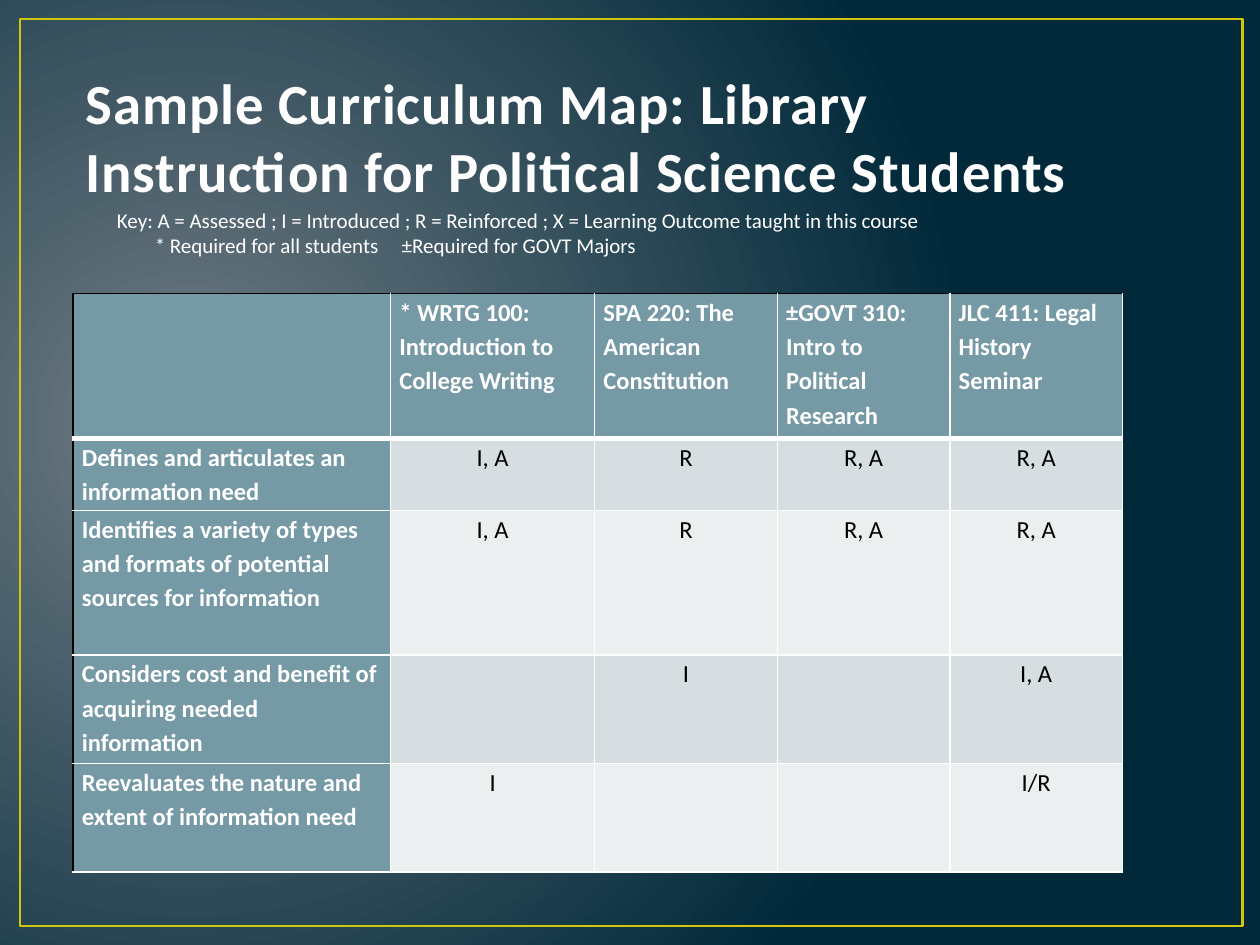
import pptx
import pptx.dml.color
import pptx.enum.shapes
import pptx.enum.text
import pptx.oxml.ns
import pptx.util
from dataclasses import dataclass
from lxml import etree

Inches, Pt = pptx.util.Inches, pptx.util.Pt
Align, Anchor = pptx.enum.text.PP_ALIGN, pptx.enum.text.MSO_ANCHOR
qn = pptx.oxml.ns.qn

TITLE = "Sample Curriculum Map: Library Instruction for Political Science Students"
KEY = [
    "Key: A = Assessed ; I = Introduced ; R = Reinforced ; X = Learning Outcome taught in this course",
    "\t* Required for all students\t±Required for GOVT Majors",
]
COURSES = [
    ["", "* WRTG 100: Introduction to College Writing", "SPA 220: The American Constitution",
     "±GOVT 310: Intro to Political Research", "JLC 411: Legal History Seminar"],
    ["Defines and articulates an information need", "I, A", "R", "R, A", "R, A"],
    ["Identifies a variety of types and formats of potential sources for information",
     "I, A", "R", "R, A", "R, A"],
    ["Considers cost and benefit of acquiring needed information", "", "I", "", "I, A"],
    ["Reevaluates the nature and extent of information need", "I", "", "", "I/R"],
]
COLS = [2.52, 1.62, 1.45, 1.37, 1.37]
ROWS = [1.15, 0.57, 1.15, 0.86, 0.86]


@dataclass
class Theme:
    font: str = "Calibri"
    glow: str = "717C84"
    navy: str = "01293A"
    frame: str = "CFC60D"
    title: str = "FEFEFE"
    edge: str = "384F55"
    white: str = "FFFFFF"
    black: str = "000000"
    head: str = "759AA5"
    bands: tuple = ("ECEFF0", "D6DEE1")
    title_size: float = 32.4
    cell_size: float = 14
    key_size: float = 12


def rgb(code):
    return pptx.dml.color.RGBColor.from_string(code)


def place(shape, box):
    shape.left, shape.top, shape.width, shape.height = map(Inches, box)


def add(parent, tag, **attrs):
    return etree.SubElement(parent, qn(tag), attrs)


def stroke(parent, tag, color, width):
    """Add a solid line element to the XML parent."""
    line = add(parent, tag, w=str(int(Pt(width))))
    add(add(line, "a:solidFill"), "a:srgbClr", val=color)
    return line


class Page:
    """Holds the theme and the slide being built."""

    def __init__(self, deck, theme):
        self.theme = theme
        self.slide = deck.slides.add_slide(deck.slide_layouts[5])

    def style(self, para, size, color, bold=False):
        for run in para.runs:
            font = run.font
            font.name, font.size, font.bold = self.theme.font, Pt(size), bold
            font.color.rgb = rgb(color)

    def backdrop(self):
        fill = self.slide.background.fill
        fill.gradient()
        colors = (self.theme.glow, self.theme.navy)
        for stop, color, spot in zip(fill.gradient_stops, colors, (0, 1)):
            stop.color.rgb, stop.position = rgb(color), spot
        grad = self.slide.element.find(".//" + qn("a:gradFill"))
        grad.remove(grad.find(qn("a:lin")))
        circle = add(grad, "a:path", path="circle")
        add(circle, "a:fillToRect", l="15000", t="50000", r="85000", b="60000")

    def frame(self, box):
        kind = pptx.enum.shapes.MSO_SHAPE.RECTANGLE
        shape = self.slide.shapes.add_shape(kind, *map(Inches, box))
        shape.shadow.inherit = False
        shape.fill.background()
        shape.line.color.rgb = rgb(self.theme.frame)
        shape.line.width = Pt(1.5)

    def title(self, box, text):
        shape = self.slide.shapes.title
        place(shape, box)
        frame = shape.text_frame
        frame.text = text
        frame.word_wrap = True
        frame.auto_size = pptx.enum.text.MSO_AUTO_SIZE.NONE
        frame.vertical_anchor = Anchor.BOTTOM
        para = frame.paragraphs[0]
        para.alignment = Align.LEFT
        self.style(para, self.theme.title_size, self.theme.title, True)
        props = para.runs[0].font._element
        props.set("spc", "50")
        props.insert(0, stroke(props, "a:ln", self.theme.edge, 1.05))

    def key(self, box, lines, stops):
        frame = self.slide.shapes.add_textbox(*map(Inches, box)).text_frame
        frame.word_wrap = True
        frame.text = "\n".join(lines)
        for para in frame.paragraphs:
            self.style(para, self.theme.key_size, self.theme.white)
            tabs = add(para._p.get_or_add_pPr(), "a:tabLst")
            for stop in stops:
                add(tabs, "a:tab", pos=str(int(Inches(stop))), algn="l")

    def table(self, left, top, cols, rows, data):
        box = map(Inches, (left, top, sum(cols), sum(rows)))
        table = self.slide.shapes.add_table(len(rows), len(cols), *box).table
        table.first_col = True
        for col, width in zip(table.columns, cols):
            col.width = Inches(width)
        for row, height in zip(table.rows, rows):
            row.height = Inches(height)
        for r, line in enumerate(data):
            for c, text in enumerate(line):
                self.cell(table.cell(r, c), r, c, text)

    def cell(self, cell, r, c, text):
        theme = self.theme
        label = r == 0 or c == 0
        props = cell._tc.get_or_add_tcPr()
        stroke(props, "a:lnL", theme.black if c == 0 else theme.white, 1)
        stroke(props, "a:lnR", theme.white, 1)
        stroke(props, "a:lnT", theme.black if r == 0 else theme.white, 1)
        stroke(props, "a:lnB", theme.white, 3 if r == 0 else 1)
        cell.fill.solid()
        cell.fill.fore_color.rgb = rgb(theme.head if label else theme.bands[r % 2])
        cell.margin_left = cell.margin_right = Inches(0.07)
        cell.margin_top = cell.margin_bottom = 0
        cell.text_frame.text = text
        para = cell.text_frame.paragraphs[0]
        para.line_spacing = 1.15
        para.alignment = Align.LEFT if label else Align.CENTER
        self.style(para, theme.cell_size, theme.white if label else theme.black, label)


def main():
    deck = pptx.Presentation()
    deck.slide_width, deck.slide_height = Inches(10), Inches(7.5)
    page = Page(deck, Theme())
    page.backdrop()
    page.frame((0.16, 0.15, 9.7, 7.2))
    page.title((0.58, 0.42, 8.33, 1.25), TITLE)
    page.table(0.58, 2.33, COLS, ROWS, COURSES)
    page.key((0.83, 1.6, 7.08, 0.81), KEY, (0.3, 2.26))
    deck.save("out.pptx")


if __name__ == "__main__":
    main()
